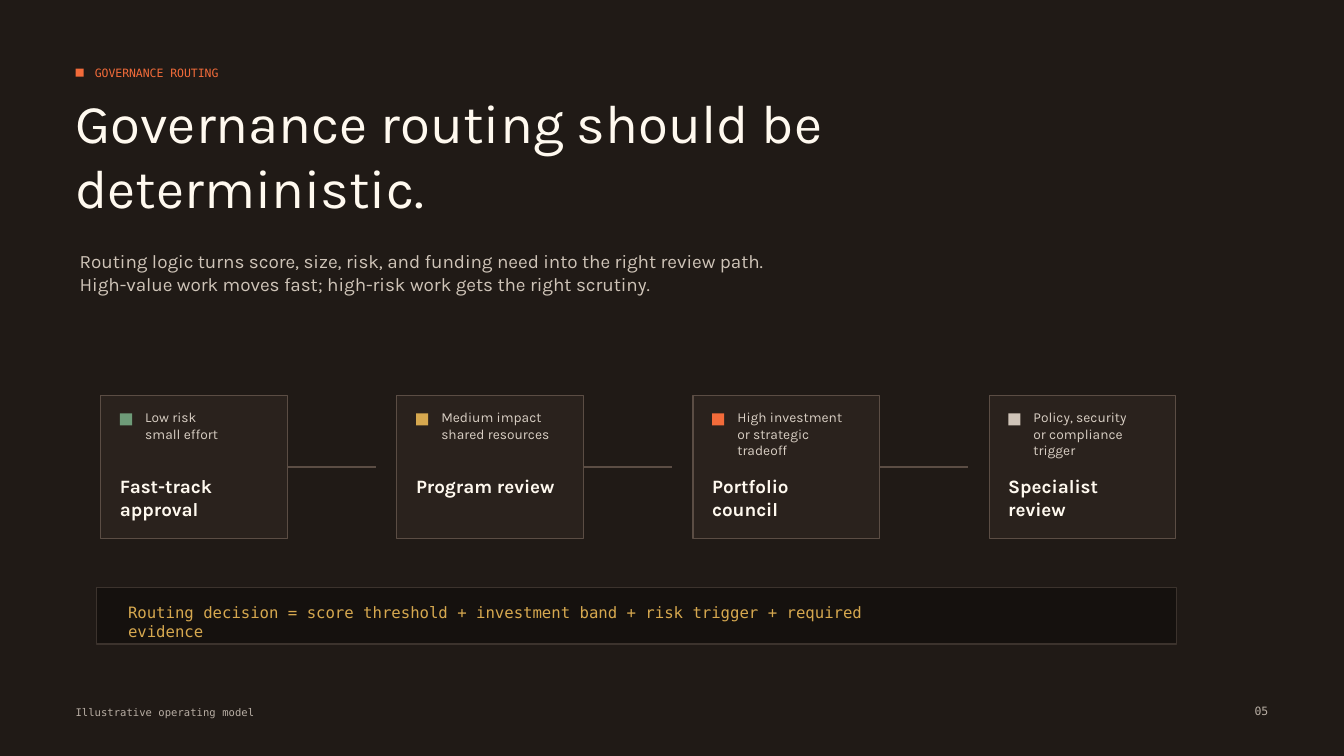
from lxml import etree
from pptx import Presentation
from pptx.dml.color import RGBColor
from pptx.enum.shapes import MSO_CONNECTOR as Connector, MSO_SHAPE as Shape
from pptx.enum.text import MSO_ANCHOR as Anchor, PP_ALIGN as Align
from pptx.oxml.ns import qn
from pptx.util import Inches, Pt

SANS, MONO = "Karla", "DejaVu Sans Mono"
COLORS = {
    "background": "201A16",
    "card": "2A221D",
    "card_line": "5B4D44",
    "formula": "15110E",
    "formula_line": "3C332D",
    "cream": "FFF9EF",
    "condition": "D9CFC4",
    "sand": "CFC4B8",
    "footer": "B8AEA4",
    "orange": "F26B3A",
    "gold": "D6A84F",
    "green": "6E9B78",
}

# Routes: marker color, condition lines, review path
ROUTES = [
    ("green", ["Low risk", "small effort"], "Fast-track approval"),
    ("gold", ["Medium impact", "shared resources"], "Program review"),
    ("orange", ["High investment", "or strategic tradeoff"], "Portfolio council"),
    ("sand", ["Policy, security", "or compliance trigger"], "Specialist review"),
]
CARD_TOP, CARD_WIDTH, CARD_HEIGHT = 3.92, 1.85, 1.42
FIRST_LEFT, LAST_LEFT = 1, 9.81
CARD_PITCH = (LAST_LEFT - FIRST_LEFT) / (len(ROUTES) - 1)
LINK_LENGTH = 0.88


def color(name):
    return RGBColor.from_string(COLORS[name])


def add_box(slide, left, top, width, height, fill, line=None):
    shape = slide.shapes.add_shape(
        Shape.RECTANGLE, Inches(left), Inches(top), Inches(width), Inches(height))
    shape.shadow.inherit = False
    shape.fill.solid()
    shape.fill.fore_color.rgb = color(fill)
    if line:
        shape.line.color.rgb = color(line)
        shape.line.width = Pt(0.75)
    else:
        shape.line.fill.background()
    return shape


def add_text(slide, left, top, width, height, lines, size, ink,
             font=SANS, bold=False, align=Align.LEFT, anchor=Anchor.TOP):
    box = slide.shapes.add_textbox(
        Inches(left), Inches(top), Inches(width), Inches(height))
    frame = box.text_frame
    frame.word_wrap = True
    frame.vertical_anchor = anchor
    frame.margin_left = frame.margin_right = 0
    frame.margin_top = frame.margin_bottom = 0
    for index, line in enumerate(lines):
        paragraph = frame.add_paragraph() if index else frame.paragraphs[0]
        paragraph.alignment = align
        run = paragraph.add_run()
        run.text = line
        run.font.name = font
        run.font.size = Pt(size)
        run.font.bold = bold
        run.font.color.rgb = color(ink)


def add_card(slide, left, marker, condition, review):
    card = add_box(slide, left, CARD_TOP, CARD_WIDTH, CARD_HEIGHT, "card", "card_line")
    add_box(slide, left + 0.19, CARD_TOP + 0.18, 0.12, 0.12, marker)
    add_text(slide, left + 0.44, CARD_TOP + 0.14, 1.17, 0.5, condition, 9.8, "condition")
    add_text(slide, left + 0.19, CARD_TOP + 0.79, 1.46, 0.44, [review], 13.5, "cream",
             bold=True)
    return card


def add_link(slide, card):
    start, middle = card.left + card.width, card.top + card.height // 2
    link = slide.shapes.add_connector(
        Connector.STRAIGHT, start, middle, start + Inches(LINK_LENGTH), middle)
    link.begin_connect(card, 3)
    link.line.color.rgb = color("card_line")
    link.line.width = Pt(1.5)
    etree.SubElement(link._element.spPr, qn("a:effectLst"))


def main():
    presentation = Presentation()
    presentation.slide_width = Inches(13.33)
    presentation.slide_height = Inches(7.5)
    slide = presentation.slides.add_slide(presentation.slide_layouts[6])
    slide.background.fill.solid()
    slide.background.fill.fore_color.rgb = color("background")

    # Heading
    add_box(slide, 0.75, 0.68, 0.08, 0.08, "orange")
    add_text(slide, 0.94, 0.6, 4.38, 0.25, ["GOVERNANCE ROUTING"], 8.2, "orange",
             font=MONO, anchor=Anchor.MIDDLE)
    add_text(slide, 0.75, 0.88, 8.23, 1.38,
             ["Governance routing should be deterministic."], 39, "cream")
    add_text(slide, 0.79, 2.48, 6.88, 0.79,
             ["Routing logic turns score, size, risk, and funding need into the right "
              "review path. High-value work moves fast; high-risk work gets the right "
              "scrutiny."], 13.5, "sand")

    # Review paths
    cards = [add_card(slide, FIRST_LEFT + index * CARD_PITCH, *route)
             for index, route in enumerate(ROUTES)]
    for card in cards[:-1]:
        add_link(slide, card)

    # Decision formula
    add_box(slide, 0.96, 5.83, 10.71, 0.56, "formula", "formula_line")
    add_text(slide, 1.27, 5.98, 7.5, 0.27,
             ["Routing decision = score threshold + investment band + risk trigger + "
              "required evidence"], 11.2, "gold", font=MONO)

    # Footer
    add_text(slide, 0.75, 7, 3.33, 0.19, ["Illustrative operating model"], 7.5, "footer",
             font=MONO)
    add_text(slide, 12.08, 6.98, 0.5, 0.21, ["05"], 8.2, "footer",
             font=MONO, align=Align.RIGHT)

    presentation.save("out.pptx")


if __name__ == "__main__":
    main()
